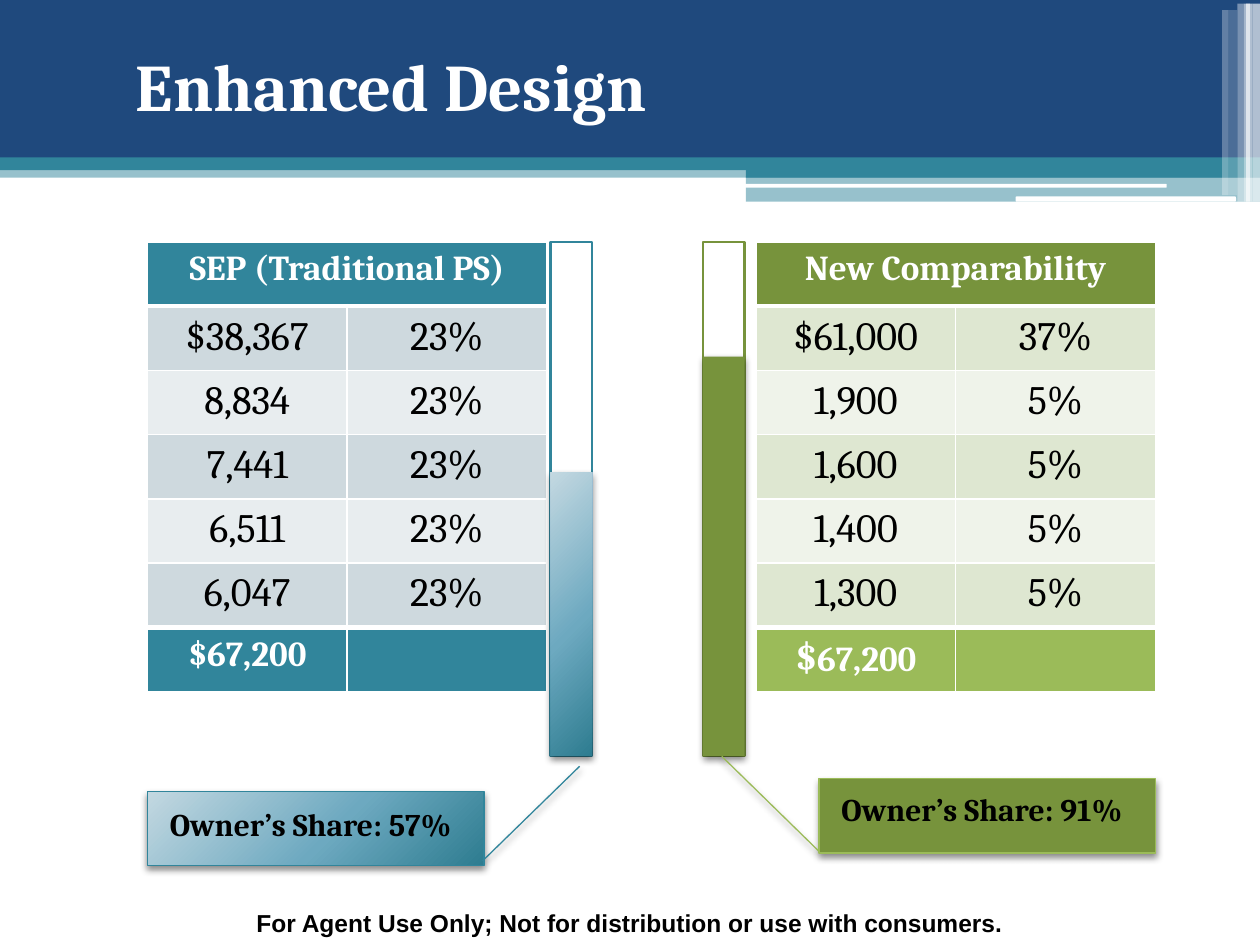
"""Build the Enhanced Design slide comparing two profit-sharing plans."""
from pptx import Presentation, util as u
from pptx.dml.color import RGBColor
from pptx.enum import shapes, text
from pptx.oxml import parse_xml
from pptx.oxml.ns import nsdecls, qn

NS = nsdecls("a")
hue = RGBColor.from_string
kinds = shapes.MSO_SHAPE
left, mid = text.PP_ALIGN.LEFT, text.PP_ALIGN.CENTER
WHITE, BLACK, TEAL, GREEN, LIME = "FFFFFF", "000000", "31859B", "77933C", "9BBB59"
BLEND = [(0, "C3D8E1"), (55, "6DA9C0"), (100, "2E7C90")]


def form(box, fill, alpha=100, kind=kinds.RECTANGLE, line=None, width=1, shade=False):
    shape = slide.shapes.add_shape(kind, *map(u.Inches, box))
    if fill == BLEND:
        shape.fill.gradient()
        grad = shape._element.spPr.find(qn("a:gradFill"))
        stops = "".join(f'<a:gs pos="{pos * 1000}"><a:srgbClr val="{tone}"/></a:gs>'
                        for pos, tone in fill)
        grad.getparent().replace(grad, parse_xml(
            f'<a:gradFill {NS} rotWithShape="1"><a:gsLst>{stops}</a:gsLst>'
            '<a:path path="circle"><a:fillToRect l="-40000" t="-90000" '
            'r="140000" b="190000"/></a:path></a:gradFill>'))
    else:
        shape.fill.solid()
        shape.fill.fore_color.rgb = hue(fill)
        if alpha < 100:
            tone = shape._element.spPr.find(qn("a:solidFill"))[0]
            tone.append(parse_xml(f'<a:alpha {NS} val="{alpha * 1000}"/>'))
    if line:
        shape.line.color.rgb = hue(line)
        shape.line.width = u.Pt(width)
    else:
        shape.line.fill.background()
    shape.shadow.inherit = False
    if shade:
        shape._element.spPr.find(qn("a:effectLst")).append(parse_xml(
            f'<a:outerShdw {NS} blurRad="{u.Pt(4)}" dist="{u.Pt(2)}" dir="5400000" '
            'rotWithShape="0"><a:srgbClr val="000000"><a:alpha val="45000"/>'
            '</a:srgbClr></a:outerShdw>'))
    return shape


def write(frame, words, size, tone, bold=True, align=mid, face="Cambria"):
    frame.word_wrap = True
    para = frame.paragraphs[0]
    para.text, para.alignment = words, align
    font = para.font
    font.name, font.size, font.bold = face, u.Pt(size), bold
    font.color.rgb = hue(tone)
    return para


deck = Presentation()
deck.slide_width, deck.slide_height = u.Inches(10), u.Inches(7.5)
slide = deck.slides.add_slide(deck.slide_layouts[6])

for box, fill, alpha in [
    ((0, 1.32, 10, 0.09), TEAL, 50),
    ((0, 0, 10, 1.26), "1F497D", 100),
    ((0, 1.25, 10, 0.1), TEAL, 100),
    ((5.92, 1.31, 4.08, 0.1), TEAL, 100),
    ((5.92, 1.4, 4.08, 0.2), TEAL, 50),
]:
    form(box, fill, alpha)

for box in [(5.91, 1.46, 3.35, 0.03), (8.06, 1.56, 1.75, 0.04)]:
    form(box, WHITE, kind=kinds.ROUNDED_RECTANGLE)

for x, y, wide, tall, alpha in [
    (9.94, 0.03, 0.07, 1.57, 65),
    (9.89, 0.03, 0.05, 1.57, 65),
    (9.87, 0.03, 0.05, 1.57, 60),
    (9.82, 0.03, 0.05, 1.57, 40),
    (9.75, 0.08, 0.07, 1.47, 20),
    (9.7, 0.08, 0.05, 1.47, 30),
]:
    form((x, y, wide, tall), WHITE, alpha)

for box, words, size, tone, align, face in [
    ((0, 7.16, 10, 0.34), "For Agent Use Only; Not for distribution or use with consumers.",
     14, BLACK, mid, "Arial"),
    ((0.98, 0, 8.05, 1.35), "Enhanced Design", 38, WHITE, left, "Cambria"),
    ((1.25, 6.34, 2.67, 0.71), "Owner’s Share: 57%", 18, BLACK, left, "Cambria"),
    ((6.58, 6.22, 2.67, 0.71), "Owner’s Share: 91%", 18, BLACK, left, "Cambria"),
]:
    if words.startswith("Owner"):
        continue
    frame = slide.shapes.add_textbox(*map(u.Inches, box)).text_frame
    write(frame, words, size, tone, align=align, face=face)
    if size == 38:
        frame.vertical_anchor = text.MSO_ANCHOR.MIDDLE

plans = [
    dict(name="SEP (Traditional PS)", x=1.17, head=TEAL, foot=TEAL, bands=("CED9DE", "E8EDEF"),
         sums=["$38,367", "8,834", "7,441", "6,511", "6,047"], rates=["23%"] * 5, sign=20,
         bar=4.37, top=3.75, fill=BLEND, edge=TEAL, call=(1.17, 6.28), turn=180,
         adj=(0.063, 0.004, 1.337, -0.285), note=(1.25, 6.34), share="57%"),
    dict(name="New Comparability", x=6, head=GREEN, foot=LIME, bands=("DEE7D1", "EFF3EA"),
         sums=["$61,000", "1,900", "1,600", "1,400", "1,300"], rates=["37%"] + ["5%"] * 4, sign=23,
         bar=5.58, top=2.83, fill=GREEN, edge=LIME, call=(6.5, 6.18), turn=0,
         adj=(0.977, 0, -0.301, -0.289), note=(6.58, 6.22), share="91%"),
]

for plan in plans:
    grid = slide.shapes.add_table(7, 2, u.Inches(plan["x"]), u.Inches(1.92),
                                  u.Inches(3.17), u.Inches(3.57)).table
    grid.first_row = grid.horz_banding = False
    for col in grid.columns:
        col.width = u.Inches(1.585)
    fills = [plan["head"]] + [plan["bands"][i % 2] for i in range(5)] + [plan["foot"]]
    for row, fill in enumerate(fills):
        grid.rows[row].height = u.Inches(0.51)
        for cell in grid.rows[row].cells:
            cell.margin_left = cell.margin_right = u.Inches(0.13)
            cell.margin_top = cell.margin_bottom = u.Inches(0.06)
            cell.fill.solid()
            cell.fill.fore_color.rgb = hue(fill)
            thick = {"T": row in (1, 6), "B": row in (0, 5)}
            for spot, side in enumerate("LRTB"):
                width = u.Pt(3 if thick.get(side) else 1)
                cell._tc.get_or_add_tcPr().insert(spot, parse_xml(
                    f'<a:ln{side} {NS} w="{width}"><a:solidFill>'
                    f'<a:srgbClr val="{WHITE}"/></a:solidFill></a:ln{side}>'))
    grid.cell(0, 0).merge(grid.cell(0, 1))
    write(grid.cell(0, 0).text_frame, plan["name"], 20, WHITE)
    for row, pair in enumerate(zip(plan["sums"], plan["rates"]), 1):
        for col, words in enumerate(pair):
            write(grid.cell(row, col).text_frame, words, 23, BLACK, bold=False)
    total = write(grid.cell(6, 0).text_frame, "$", plan["sign"], WHITE)
    run = total.add_run()
    run.text, run.font.size = "67,200", u.Pt(20)

    form((plan["bar"], 1.92, 0.33, 4.08), WHITE, line=plan["head"], width=1.5)
    form((plan["bar"], plan["top"], 0.33, 6 - plan["top"]), plan["fill"], shade=True)
    call = form((*plan["call"], 2.67, 0.59), plan["fill"], kind=kinds.LINE_CALLOUT_1,
                line=plan["edge"], width=0.75, shade=True)
    call.rotation = plan["turn"]
    for spot, value in enumerate(plan["adj"]):
        call.adjustments[spot] = value
    note = slide.shapes.add_textbox(*map(u.Inches, (*plan["note"], 2.67, 0.71)))
    write(note.text_frame, f"Owner’s Share: {plan['share']}", 18, BLACK, align=left)

deck.save("out.pptx")
